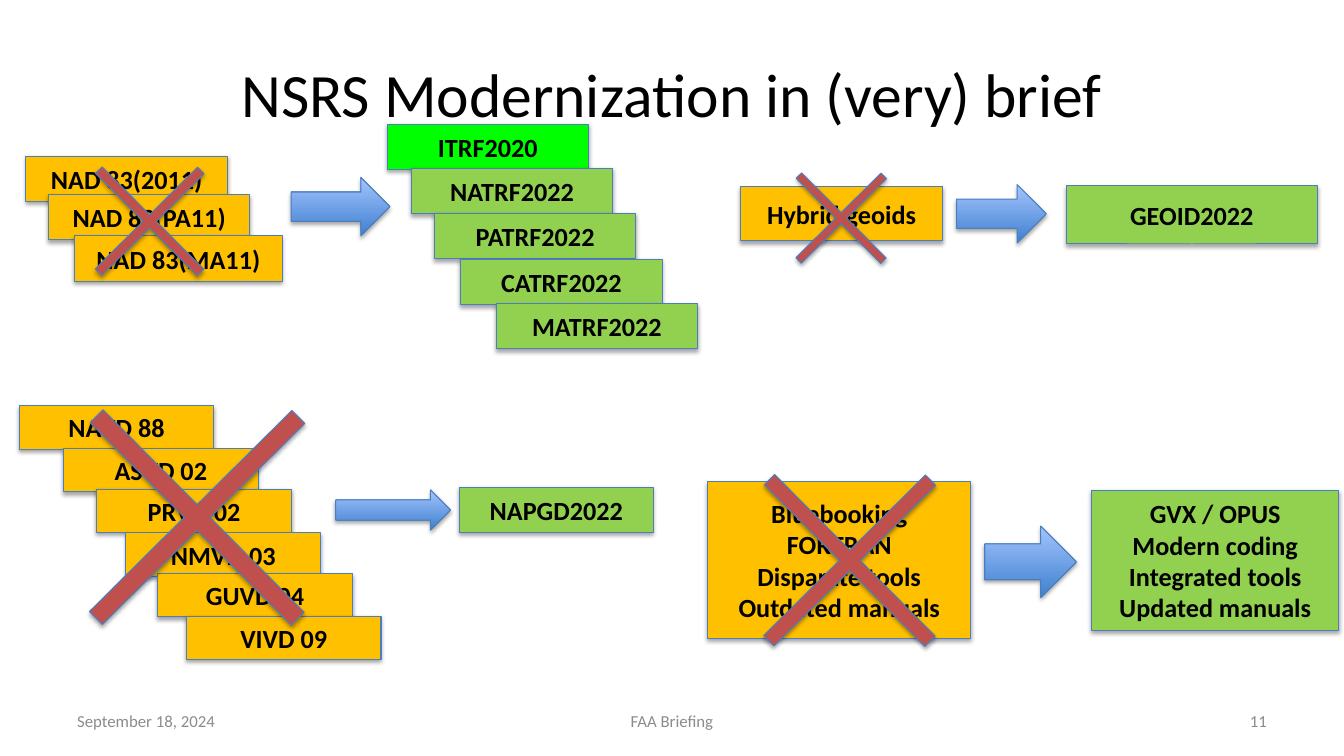
from pptx import Presentation
from pptx.dml.color import RGBColor
from pptx.enum.shapes import MSO_SHAPE as SHAPE
from pptx.enum.text import MSO_ANCHOR as ANCHOR, PP_ALIGN as ALIGN
from pptx.oxml import parse_xml
from pptx.oxml.ns import nsdecls, qn
from pptx.util import Pt

FONT = "Calibri"
OLD, NEW, GLOBAL = "FFC000", "92D050", "00FF00"
OUTLINE, CROSS = "4B7EBC", "C0504D"
ARROW_BOTTOM, ARROW_TOP = "3F80CE", "A4C4FF"


def color(value):
    return RGBColor.from_string(value)


def write(frame, text, size=18.7, ink="000000", bold=False, align=ALIGN.CENTER):
    """Fill a text frame, one paragraph for each line of text."""
    frame.word_wrap = True
    frame.vertical_anchor = ANCHOR.MIDDLE
    for index, line in enumerate(text.split("\n")):
        paragraph = frame.paragraphs[0] if index == 0 else frame.add_paragraph()
        paragraph.alignment = align
        run = paragraph.add_run()
        run.text = line
        run.font.name = FONT
        run.font.size = Pt(size)
        run.font.bold = bold
        run.font.color.rgb = color(ink)


def place(shapes, preset, left, top, width, height, fill=None):
    """Add a preset shape with the slide's common outline and soft shadow."""
    shape = shapes.add_shape(preset, Pt(left), Pt(top), Pt(width), Pt(height))
    if fill:
        shape.fill.solid()
        shape.fill.fore_color.rgb = color(fill)
    shape.line.color.rgb = color(OUTLINE)
    shape.line.width = Pt(0.75)
    shape.shadow.inherit = False
    effects = shape._element.spPr.find(qn("a:effectLst"))
    effects.append(parse_xml(
        f'<a:outerShdw {nsdecls("a")} blurRad="{Pt(3.1)}" dist="{Pt(1.8)}" '
        'dir="5400000" rotWithShape="0"><a:srgbClr val="000000">'
        '<a:alpha val="35000"/></a:srgbClr></a:outerShdw>'))
    return shape


def add_box(shapes, text, left, top, width, height, fill):
    box = place(shapes, SHAPE.RECTANGLE, left, top, width, height, fill)
    write(box.text_frame, text, bold=True)


def add_stack(slide, boxes, height):
    """Group overlapping boxes given as (text, left, top, width, fill)."""
    stack = slide.shapes.add_group_shape()
    for text, left, top, width, fill in boxes:
        add_box(stack.shapes, text, left, top, width, height, fill)


def add_arrow(slide, left, top, width, height):
    arrow = place(slide.shapes, SHAPE.RIGHT_ARROW, left, top, width, height)
    arrow.fill.gradient()
    arrow.fill.gradient_angle = 90
    for stop, shade in zip(arrow.fill.gradient_stops, (ARROW_BOTTOM, ARROW_TOP)):
        stop.color.rgb = color(shade)


def add_cross(slide, left, top, side):
    cross = place(slide.shapes, SHAPE.CROSS, left, top, side, side, CROSS)
    cross.adjustments[0] = 0.468
    cross.rotation = 45.2


def add_footer(slide, text, left, width, align):
    footer = slide.shapes.add_textbox(Pt(left), Pt(500.4), Pt(width), Pt(28.8))
    write(footer.text_frame, text, size=12, ink="8C8C8C", align=align)


def add_title(slide, text):
    title = slide.shapes.title
    title.left, title.top, title.width, title.height = Pt(48), Pt(21.6), Pt(864), Pt(90)
    write(title.text_frame, text, size=44)


def add_reference_frames(slide):
    add_stack(slide, [
        ("NAD 83(2011)", 18.5, 111.6, 144, OLD),
        ("NAD 83(PA11)", 34.6, 139, 144, OLD),
        ("NAD 83(MA11)", 53.3, 168.5, 148.3, OLD),
    ], 32.4)
    add_arrow(slide, 208, 126.7, 70.6, 41.8)
    add_stack(slide, [
        ("ITRF2020", 276.5, 88.6, 144, GLOBAL),
        ("NATRF2022", 293.8, 120.2, 144, NEW),
        ("PATRF2022", 310.3, 152.4, 144, NEW),
        ("CATRF2022", 329, 185.2, 144, NEW),
        ("MATRF2022", 354.4, 216.7, 144, NEW),
    ], 32.6)
    add_cross(slide, 55.4, 106.6, 103)


def add_geoids(slide):
    add_box(slide.shapes, "Hybrid geoids", 529.2, 133.2, 144, 38.9, OLD)
    add_arrow(slide, 683.3, 131.8, 64.1, 41.8)
    add_box(slide.shapes, "GEOID2022", 761.6, 132.5, 179.3, 41.8, NEW)
    add_cross(slide, 558, 113, 85.7)


def add_vertical_datums(slide):
    add_stack(slide, [
        ("NAVD 88", 13.7, 289.8, 139, OLD),
        ("ASVD 02", 45.4, 320.4, 139, OLD),
        ("PRVD 02", 69.1, 349.4, 139, OLD),
        ("NMVD 03", 90, 380.7, 139, OLD),
        ("GUVD 04", 112.7, 409.7, 139, OLD),
        ("VIVD 09", 133.2, 440.1, 139, OLD),
    ], 31)
    add_arrow(slide, 239.8, 349.9, 82, 28.8)
    add_box(slide.shapes, "NAPGD2022", 328.3, 348, 138.2, 32.4, NEW)
    add_cross(slide, 38.9, 267.8, 203.8)


def add_tools(slide):
    add_box(slide.shapes, "Bluebooking\nFORTRAN\nDisparate tools\nOutdated manuals",
            505.4, 344.2, 188.2, 111.6, OLD)
    add_arrow(slide, 703.4, 375.8, 65.5, 51.1)
    add_box(slide.shapes, "GVX / OPUS\nModern coding\nIntegrated tools\nUpdated manuals",
            779.8, 350.2, 176.4, 100.1, NEW)
    add_cross(slide, 525.6, 319, 162.7)


def main():
    deck = Presentation()
    deck.slide_width, deck.slide_height = Pt(960), Pt(540)
    slide = deck.slides.add_slide(deck.slide_layouts[5])
    add_title(slide, "NSRS Modernization in (very) brief")
    add_reference_frames(slide)
    add_geoids(slide)
    add_vertical_datums(slide)
    add_tools(slide)
    add_footer(slide, "September 18, 2024", 48, 224, ALIGN.LEFT)
    add_footer(slide, "FAA Briefing", 328, 304, ALIGN.CENTER)
    add_footer(slide, "11", 688, 224, ALIGN.RIGHT)
    deck.save("out.pptx")


if __name__ == "__main__":
    main()
